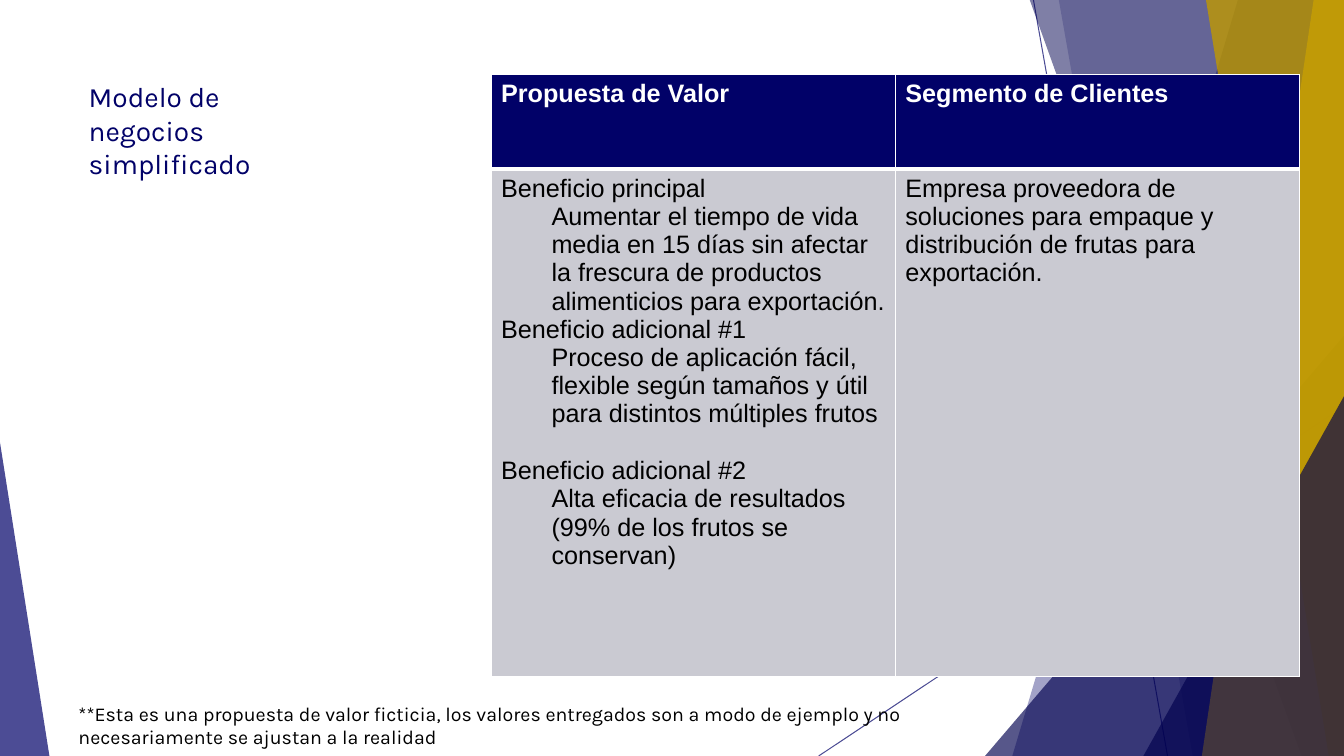
"""Build the simplified business model slide."""
from dataclasses import dataclass

from pptx import Presentation
from pptx.dml.color import RGBColor as Rgb
from pptx.enum.shapes import MSO_CONNECTOR as Link, MSO_SHAPE as Kind
from pptx.enum.text import MSO_ANCHOR as Anchor, MSO_AUTO_SIZE as Fit, PP_ALIGN as Align
from pptx.oxml.ns import qn
from pptx.oxml.xmlchemy import OxmlElement as Node
from pptx.util import Inches, Pt

WIDE, HIGH, TOP = 13.33, 7.5, -0.01


@dataclass(frozen=True)
class Theme:
    """Colours, fonts and type sizes."""
    navy: str = "010168"
    dark: str = "00004E"
    gold: str = "FFCD00"
    amber: str = "BF9900"
    grey: str = "CACAD2"
    white: str = "FFFFFF"
    black: str = "000000"
    head: str = "Karla"
    body: str = "Arial"
    big: int = 20
    mid: int = 18
    small: int = 14


@dataclass(frozen=True)
class Ray:
    """A thin line between two points."""
    start: tuple[float, float]
    end: tuple[float, float]


@dataclass(frozen=True)
class Band:
    """A full-height band that runs from a slanted left edge to the right margin."""
    top: float
    foot: float
    color: str
    alpha: int


@dataclass(frozen=True)
class Wedge:
    """A triangle standing on the lower edge, with its tip at one side."""
    left: float
    top: float
    width: float
    tip: int
    color: str
    alpha: int


@dataclass(frozen=True)
class Line:
    """One paragraph of a table cell."""
    text: str
    level: int = 0
    before: float = 0


THEME = Theme()
DECOR = [
    Ray((10.25, 0), (11.58, HIGH)),
    Ray((WIDE, 4.03), (8.12, HIGH)),
    Band(12.28, 10.04, THEME.navy, 36),
    Band(10.5, 11.83, THEME.navy, 20),
    Wedge(9.77, 3.33, 3.56, 1, THEME.dark, 66),
    Band(10.21, 12.91, THEME.dark, 50),
    Band(13.03, 11.92, THEME.gold, 70),
    Band(11.96, 13.18, THEME.amber, 80),
    Wedge(11.34, 3.93, 1.99, 1, THEME.dark, 66),
    Wedge(0, 4.39, 0.49, 0, THEME.navy, 70),
]
GRID = [
    [[Line("Propuesta de Valor")], [Line("Segmento de Clientes")]],
    [[
        Line("Beneficio principal"),
        Line("Aumentar el tiempo de vida media en 15 días sin afectar la frescura "
             "de productos alimenticios para exportación.", 1),
        Line("Beneficio adicional #1"),
        Line("Proceso de aplicación fácil, flexible según tamaños y útil para "
             "distintos múltiples frutos", 1),
        Line("Beneficio adicional #2", before=20.3),
        Line("Alta eficacia de resultados (99% de los frutos se conservan)", 1),
    ], [
        Line("Empresa proveedora de soluciones para empaque y distribución de "
             "frutas para exportación."),
    ]],
]


def fade(fill, alpha: int) -> None:
    """Set the opacity of a solid fill, in percent."""
    color = fill._xPr.find(qn("a:solidFill"))[0]
    node = Node("a:alpha")
    node.set("val", str(alpha * 1000))
    color.append(node)


def paint(shape, color: str, alpha: int) -> None:
    """Give a shape a clear fill and no outline."""
    shape.shadow.inherit = False
    shape.fill.solid()
    shape.fill.fore_color.rgb = Rgb.from_string(color)
    fade(shape.fill, alpha)
    shape.line.fill.background()


def draw(shapes, part: Ray | Band | Wedge) -> None:
    """Draw one part of the backdrop."""
    match part:
        case Ray(start, end):
            ray = shapes.add_connector(Link.STRAIGHT, *map(Inches, start + end))
            ray.line.width = Pt(0.75)
            ray.line.color.rgb = Rgb.from_string(THEME.navy)
            fade(ray.line.fill, 70)
            ray._element.spPr.append(Node("a:effectLst"))
        case Band(top, foot, color, alpha):
            form = shapes.build_freeform(Inches(top), Inches(TOP))
            spots = [(WIDE, TOP), (WIDE, HIGH), (foot, HIGH)]
            form.add_line_segments([(Inches(x), Inches(y)) for x, y in spots])
            paint(form.convert_to_shape(), color, alpha)
        case Wedge(left, top, width, tip, color, alpha):
            box = map(Inches, (left, top, width, HIGH - top))
            wedge = shapes.add_shape(Kind.ISOSCELES_TRIANGLE, *box)
            wedge.adjustments[0] = tip
            paint(wedge, color, alpha)


def write(para, text: str, font: str, size: int, color: str, bold: bool = False) -> None:
    """Add one styled run to a paragraph."""
    run = para.add_run()
    run.text = text
    run.font.name, run.font.size, run.font.bold = font, Pt(size), bold
    run.font.color.rgb = Rgb.from_string(color)


def edge(cell, widths: dict[str, int]) -> None:
    """Draw white borders round a cell."""
    props = cell._tc.get_or_add_tcPr()
    for spot, (side, width) in enumerate(widths.items()):
        line, fill, color = Node(f"a:ln{side}"), Node("a:solidFill"), Node("a:srgbClr")
        line.set("w", str(Pt(width)))
        color.set("val", THEME.white)
        fill.append(color)
        line.append(fill)
        props.insert(spot, line)


def fill_cell(cell, lines: list[Line], head: bool) -> None:
    """Fill, frame and write one table cell."""
    cell.fill.solid()
    cell.fill.fore_color.rgb = Rgb.from_string(THEME.navy if head else THEME.grey)
    edge(cell, {"L": 1, "R": 1, "T": 1 if head else 3, "B": 3 if head else 1})
    frame = cell.text_frame
    for spot, line in enumerate(lines):
        para = frame.add_paragraph() if spot else frame.paragraphs[0]
        para.level = line.level
        para.space_before = Pt(line.before)
        props = para._p.get_or_add_pPr()
        props.set("marL", str(Inches(0.5 * line.level)))
        props.set("indent", "0")
        color = THEME.white if head else THEME.black
        write(para, line.text, THEME.body, THEME.mid, color, head)


def add_grid(shapes) -> None:
    """Add the table of value offer and client segment."""
    box = map(Inches, (4.87, 0.74, 8.02, 5.97))
    table = shapes.add_table(2, 2, *box).table
    for col in table.columns:
        col.width = Inches(4.01)
    for row, height, cells in zip(table.rows, (0.94, 5.03), GRID):
        row.height = Inches(height)
        for cell, lines in zip(row.cells, cells):
            fill_cell(cell, lines, cells is GRID[0])


def main() -> None:
    """Build and save the slide."""
    deck = Presentation()
    deck.slide_width, deck.slide_height = Inches(WIDE), Inches(HIGH)
    slide = deck.slides.add_slide(deck.slide_layouts[5])
    shapes = slide.shapes
    title = shapes.title
    for part in DECOR:
        draw(shapes, part)
    shapes._spTree.append(title._element)
    title.left, title.top, title.width, title.height = map(Inches, (0.78, 0.74, 2.47, 4.54))
    frame = title.text_frame
    frame.word_wrap, frame.auto_size, frame.vertical_anchor = True, Fit.NONE, Anchor.TOP
    frame.paragraphs[0].alignment = Align.LEFT
    write(frame.paragraphs[0], "Modelo de negocios simplificado", THEME.head, THEME.big, THEME.navy)
    add_grid(shapes)
    note = shapes.add_textbox(*map(Inches, (0.68, 6.91, 8.73, 0.59))).text_frame
    note.word_wrap, note.auto_size = True, Fit.SHAPE_TO_FIT_TEXT
    write(note.paragraphs[0], "**Esta es una propuesta de valor ficticia, los valores entregados son a "
          "modo de ejemplo y no necesariamente se ajustan a la realidad",
          THEME.head, THEME.small, THEME.black)
    deck.save("out.pptx")


if __name__ == "__main__":
    main()
